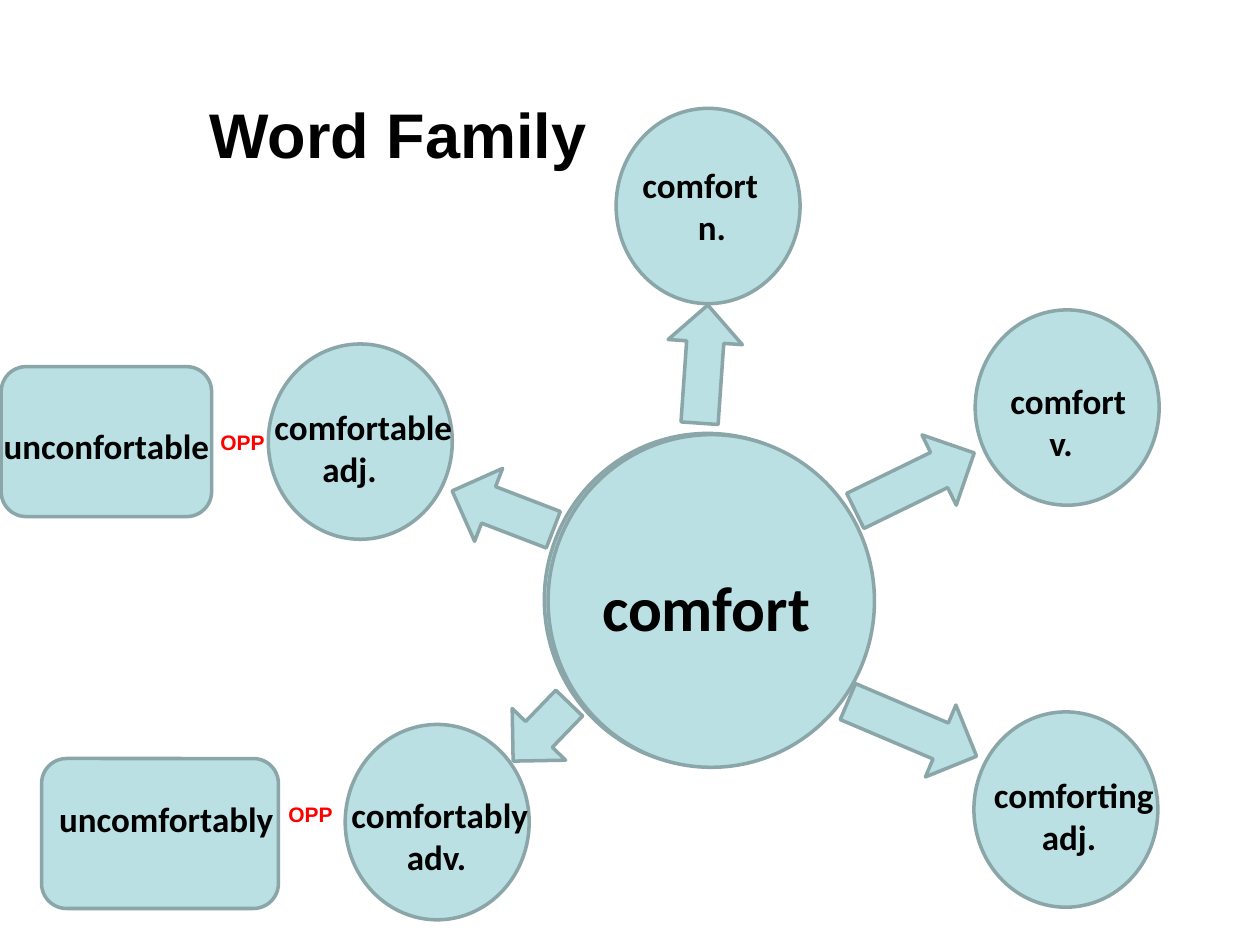
from pptx import Presentation
from pptx.dml.color import RGBColor
from pptx.enum.shapes import MSO_SHAPE as Shape
from pptx.enum.text import MSO_ANCHOR as Anchor, PP_ALIGN as Align
from pptx.util import Pt

SCALE = 9144  # 100 px to the inch
BLACK = RGBColor(0, 0, 0)
RED = RGBColor(255, 0, 0)
FILL = RGBColor(0xBB, 0xE0, 0xE3)
EDGE = RGBColor(0x8A, 0xA6, 0xA8)

TITLE = ("Word Family", (-144, 33, 920, 145))
HUB = ("comfort", (468, 446, 198, 71))
HUB_DISCS = [(432, 344), (435, 345)]
HUB_SIZE = (259, 264)
NODE_SIZE = (146, 155)
# word, part of speech, its indent, disc corner, text box
NODES = [
    ("comfortably", "adv.", 44, (274, 575), (269, 625, 183, 77)),
    ("comfortable", "adj.", 38, (213, 273), (208, 317, 184, 77)),
    ("comfort", "n.", 44, (489, 86), (500, 125, 160, 77)),
    ("comfort", "v.", 31, (774, 246), (792, 296, 150, 77)),
    ("comforting", "adj.", 38, (773, 565), (779, 609, 162, 77)),
]
# box, rotation
ARROWS = [
    ((529, 242, 59, 94), 4),
    ((693, 523, 62, 111), 113),
    ((400, 549, 59, 64), 224),
    ((695, 330, 62, 105), 64),
    ((368, 362, 62, 86), 291),
]
# word, card, text box, box of the OPP label
OPPOSITES = [
    ("unconfortable", (1, 291, 167, 119), (-7, 332, 185, 44), (165, 336, 74, 30)),
    ("uncomfortably", (33, 602, 188, 119), (37, 628, 192, 44), (219, 631, 69, 83)),
]


def emu(box):
    return [n * SCALE for n in box]


def style(par, size, face="Calibri", color=BLACK):
    font = par.font
    font.size, font.name, font.bold = Pt(size), face, True
    font.color.rgb = color


def draw(kind, box, turn=0):
    shape = slide.shapes.add_shape(kind, *emu(box))
    shape.shadow.inherit = False
    shape.rotation = turn
    shape.fill.solid()
    shape.fill.fore_color.rgb = FILL
    shape.line.color.rgb = EDGE
    shape.line.width = Pt(2)


def write(lines, box, size=20, face="Calibri", color=BLACK, indent=0):
    """Add a text box; every line after the first is indented."""
    frame = slide.shapes.add_textbox(*emu(box)).text_frame
    frame.word_wrap = True
    frame.text = "\n".join(lines)
    for i, par in enumerate(frame.paragraphs):
        if i:
            par._p.get_or_add_pPr().set("marL", str(indent * SCALE))
        style(par, size, face, color)


prs = Presentation()
prs.slide_width, prs.slide_height = emu((1000, 750))
slide = prs.slides.add_slide(prs.slide_layouts[5])

title = slide.shapes.title
text, box = TITLE
title.left, title.top, title.width, title.height = emu(box)
title.text_frame.text = text
title.text_frame.vertical_anchor = Anchor.MIDDLE
head = title.text_frame.paragraphs[0]
head.alignment = Align.CENTER
style(head, 36, "Arial")

back, front = HUB_DISCS
draw(Shape.OVAL, back + HUB_SIZE)
for word, part, indent, corner, box in NODES:
    draw(Shape.OVAL, corner + NODE_SIZE)
for box, turn in ARROWS:
    draw(Shape.UP_ARROW, box, turn)
for word, part, indent, corner, box in NODES:
    write([word, part], box, indent=indent)
for word, card, box, label in OPPOSITES:
    draw(Shape.FLOWCHART_ALTERNATE_PROCESS, card)
    write([word], box)
    write(["OPP"], label, 12, "Arial", RED)
draw(Shape.OVAL, front + HUB_SIZE)
word, box = HUB
write([word], box, 36)

prs.save("out.pptx")
